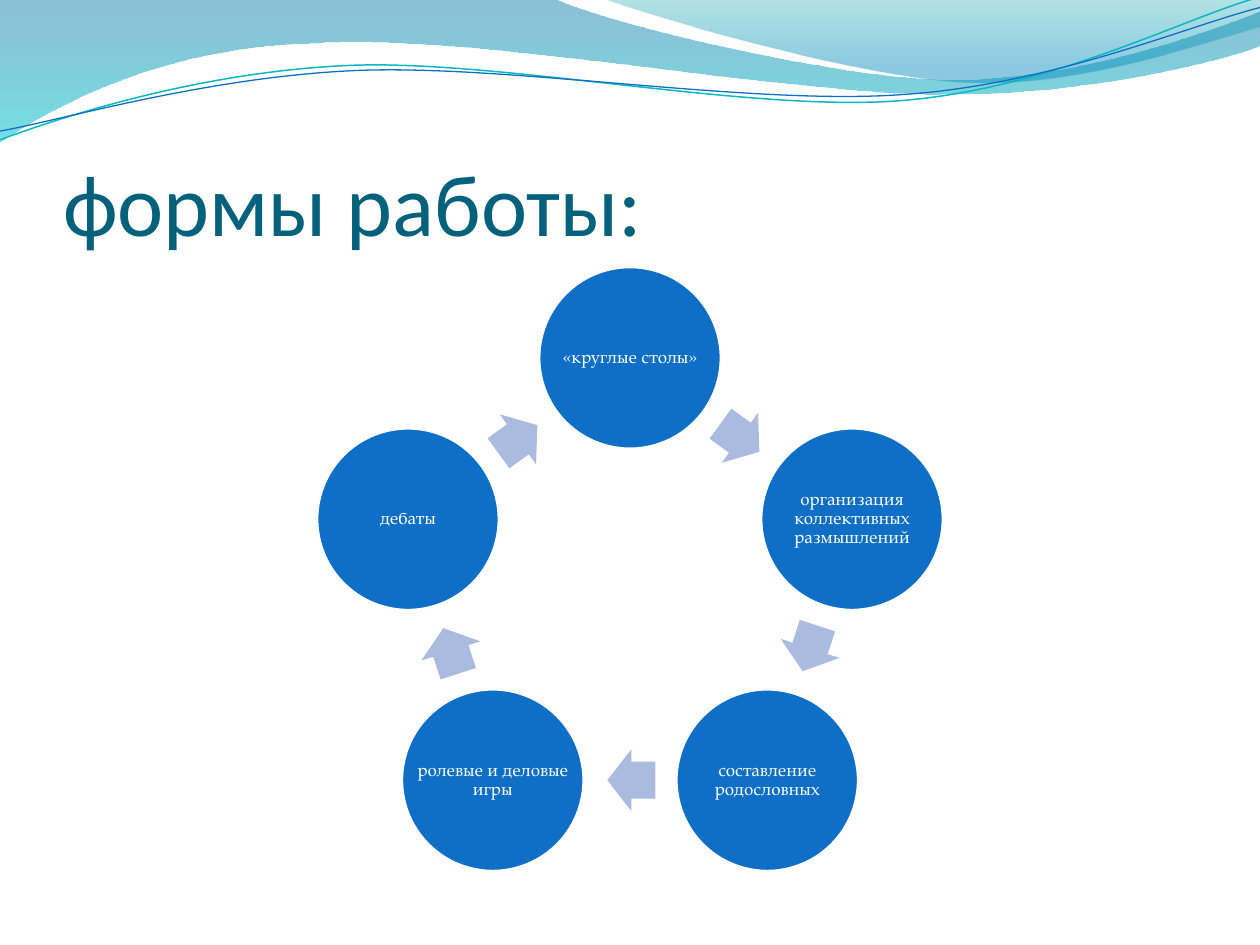
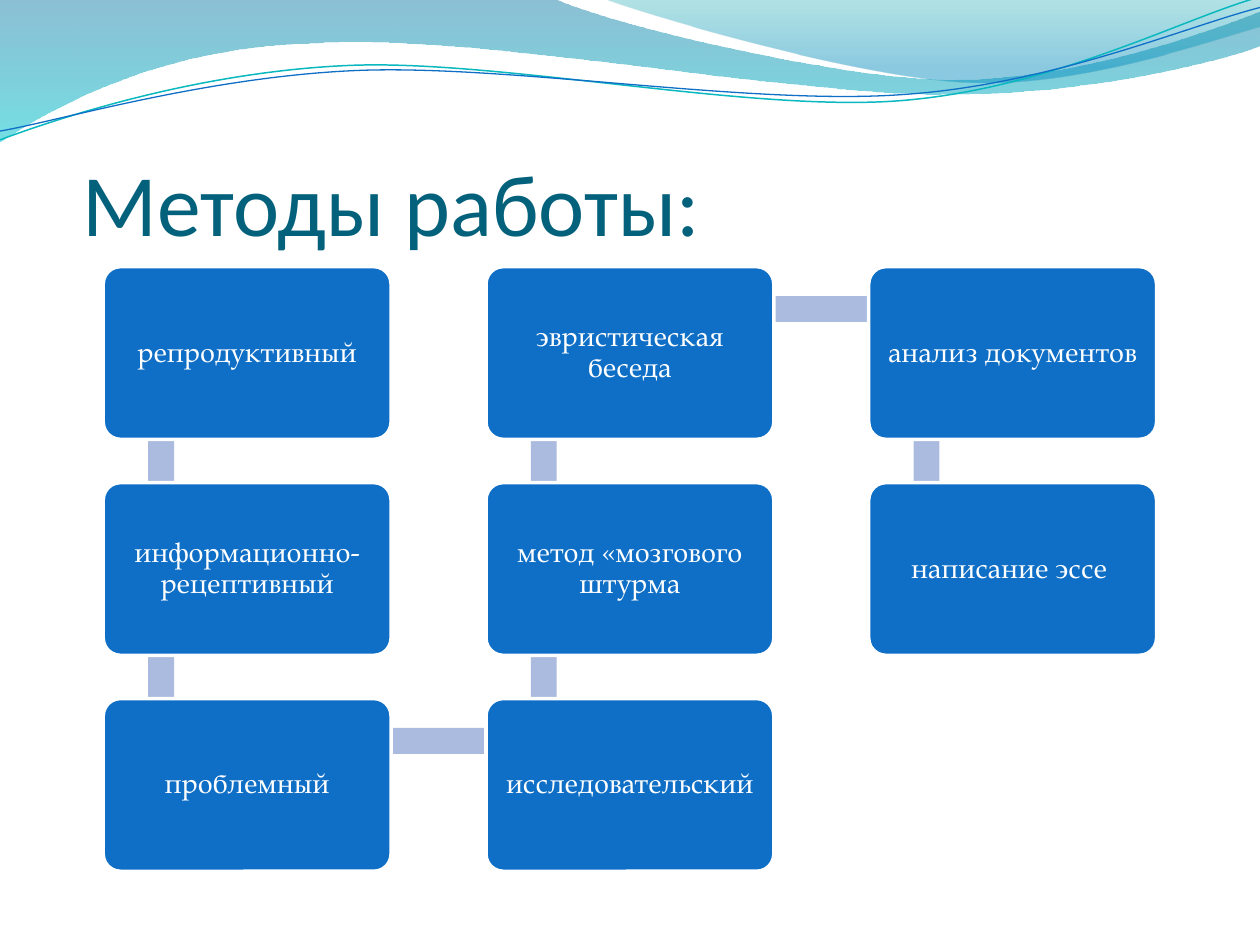
from math import cos, radians, sin

from lxml.etree import SubElement
from pptx import Presentation
from pptx.dml.color import RGBColor
from pptx.enum.shapes import MSO_SHAPE
from pptx.enum.text import MSO_ANCHOR, MSO_AUTO_SIZE, PP_ALIGN
from pptx.oxml.ns import qn
from pptx.util import Pt

# Content
FORMS_TITLE = "формы работы:"
FORMS = [
    "«круглые столы»",
    "организация коллективных размышлений",
    "составление родословных",
    "ролевые и деловые игры",
    "дебаты",
]
METHODS_TITLE = " Методы работы:"
METHODS = [
    "репродуктивный",
    "информационно-рецептивный",
    "проблемный",
    "исследовательский",
    "метод «мозгового штурма",
    "эвристическая беседа",
    "анализ документов",
    "написание эссе ",
]

# Shared style
BLUE, PALE, TITLE_COLOR, WHITE = "0F6FC6", "ABBBDF", "04617B", "FFFFFF"
TITLE_FONT, BODY_FONT = "Calibri", "TeX Gyre Pagella"

# Wave outlines: one point is a straight step, three points are a Bézier curve
BANDS = [
    ([[(0, 0)], [(316.8, -0.7)],
      [(342.7, 12.2), (478.1, 45.4), (545.8, 45.4)],
      [(614.2, 45.4), (689.8, 18.7), (720, 6.5)],
      [(720.7, 25.9)],
      [(707.8, 31.7), (626.4, 54.7), (537.1, 54)],
      [(447.8, 54), (275, 20.2), (185, 24.5)],
      [(92.9, 25.9), (33.1, 59.8), (-0.7, 81.4)]],
     [(0, "0074A1", 45), (1, "00C6CF", 55)]),
    ([[(344.9, -0.7)],
      [(366.5, 7.9), (491, 44.6), (553.7, 46.8)],
      [(616.3, 49.7), (691.9, 23), (720, 15.1)],
      [(720, 0)]],
     [(0, "00A1A9", 30), (0.8, "008BBF", 45)]),
]
STRANDS = [
    ([[(0, 79.9)],
      [(34.6, 67), (113.8, 41), (199.4, 37.4)],
      [(284.4, 33.8), (427, 64.1), (513.4, 57.6)],
      [(599.8, 51.1), (675.4, 10.8), (718.6, -1.4)]], "0AB8BF", 0.85),
    ([[(0, 74.9)],
      [(33.8, 69.1), (118.1, 43.9), (203.8, 40.3)],
      [(290.2, 36.7), (429.8, 60.5), (516.2, 54)],
      [(601.9, 48.2), (677.5, 15.1), (720, 4.3)]], BLUE, 0.75),
]
STRAND_TILT = 2.7


def color(value):
    return RGBColor.from_string(value)


def level(outline, center_x=359.5, center_y=42):
    """Undo the tilt of a strand, which its rotation then restores."""
    across, down = cos(radians(STRAND_TILT)), sin(radians(STRAND_TILT))
    return [[(center_x + (x - center_x) * across - (y - center_y) * down,
              center_y + (x - center_x) * down + (y - center_y) * across)
             for x, y in part] for part in outline]


def add_wave(page, outline, close):
    """Build the outline from its end points, then bend the curved steps."""
    ends = [(Pt(part[-1][0]), Pt(part[-1][1])) for part in outline]
    builder = page.shapes.build_freeform(*ends[0])
    builder.add_line_segments(ends[1:], close=close)
    wave = builder.convert_to_shape()
    wave.shadow.inherit = False

    left, top = min(x for x, _ in ends), min(y for _, y in ends)
    steps = list(wave._element.spPr.iter(qn("a:lnTo")))
    for step, part in zip(steps, outline[1:]):
        if len(part) == 3:
            curve = step.makeelement(qn("a:cubicBezTo"))
            for x, y in part:
                SubElement(curve, qn("a:pt"), x=str(Pt(x) - left), y=str(Pt(y) - top))
            step.getparent().replace(step, curve)
    return wave


def add_waves(page, layout):
    """Draw the waves once and move them to the layout."""
    waves = []
    for outline, stops in BANDS:
        band = add_wave(page, outline, True)
        band.line.fill.background()
        band.fill.gradient()
        band.fill.gradient_angle = 270
        for stop, (position, tint, _) in zip(band.fill.gradient_stops, stops):
            stop.position = position
            stop.color.rgb = color(tint)
        tints = list(band._element.spPr.iter(qn("a:srgbClr")))
        for tint, (_, _, opacity) in zip(tints, stops):
            SubElement(tint, qn("a:alpha"), val=str(opacity * 1000))
        waves.append(band)
    for outline, tint, width in STRANDS:
        strand = add_wave(page, level(outline), False)
        strand.rotation = 360 - STRAND_TILT
        strand.fill.background()
        strand.line.color.rgb = color(tint)
        strand.line.width = Pt(width)
        waves.append(strand)
    for index, wave in enumerate(waves):
        layout.shapes._spTree.insert(2 + index, wave._element)


def place_title(layout):
    title = layout.placeholders[0]
    title.left, title.top, title.width, title.height = Pt(36), Pt(55.4), Pt(648), Pt(90)


def style_runs(paragraph, font, size, tint):
    for span in paragraph.runs:
        span.font.name = font
        span.font.size = Pt(size)
        span.font.color.rgb = color(tint)


def set_margins(frame, left, top, right, bottom):
    frame.margin_left, frame.margin_top = Pt(left), Pt(top)
    frame.margin_right, frame.margin_bottom = Pt(right), Pt(bottom)


def set_title(page, text):
    frame = page.shapes.title.text_frame
    frame.text = text
    frame.auto_size = MSO_AUTO_SIZE.NONE
    frame.vertical_anchor = MSO_ANCHOR.BOTTOM
    set_margins(frame, 0, 3.6, 0, 0)
    paragraph = frame.paragraphs[0]
    paragraph.alignment = PP_ALIGN.LEFT
    style_runs(paragraph, TITLE_FONT, 50, TITLE_COLOR)


def add_block(page, kind, left, top, width, height, fill, outlined=False):
    block = page.shapes.add_shape(kind, Pt(left), Pt(top), Pt(width), Pt(height))
    block.shadow.inherit = False
    block.fill.solid()
    block.fill.fore_color.rgb = color(fill)
    if outlined:
        block.line.color.rgb = color(WHITE)
        block.line.width = Pt(2)
    else:
        block.line.fill.background()
    return block


def set_label(box, text, size, margin):
    frame = box.text_frame
    frame.text = text
    frame.word_wrap = True
    frame.vertical_anchor = MSO_ANCHOR.MIDDLE
    set_margins(frame, margin, margin, margin, margin)
    paragraph = frame.paragraphs[0]
    paragraph.alignment = PP_ALIGN.CENTER
    paragraph.line_spacing = 0.9
    style_runs(paragraph, BODY_FONT, size, WHITE)


def add_cycle(page, labels):
    """Circles on a ring, with an arrow halfway to each next one."""
    center_x, center_y, radius = 360, 337.9, 133.4
    diameter, arrow_width, arrow_height = 104.4, 27.4, 35.3
    turn = 360 / len(labels)

    def corner(angle, distance, width, height):
        x = center_x + distance * sin(radians(angle))
        y = center_y - distance * cos(radians(angle))
        return x - width / 2, y - height / 2

    for index, label in enumerate(labels):
        left, top = corner(index * turn, radius, diameter, diameter)
        add_block(page, MSO_SHAPE.OVAL, left, top, diameter, diameter, BLUE, True)
        # The label spans the whole circle, wider than the oval's own text area
        box = page.shapes.add_textbox(Pt(left), Pt(top), Pt(diameter), Pt(diameter))
        set_label(box, label, 10, 0.9)

        angle = (index + 0.5) * turn
        left, top = corner(angle - 0.4, radius * cos(radians(turn / 2)),
                           arrow_width, arrow_height)
        arrow = add_block(page, MSO_SHAPE.RIGHT_ARROW, left, top,
                          arrow_width, arrow_height, PALE)
        arrow.adjustments[0], arrow.adjustments[1] = 0.6, 0.5
        arrow.rotation = angle


def add_snake(page, labels, rows=3):
    """Cards running down and up the columns, joined by bars behind them."""
    left, top, step_x, step_y = 59, 152.4, 218.7, 123.4
    width, height, bar = 164.5, 98.7, 14.8
    joint_x, joint_y = 33.1, 24.2

    cards = []
    for index in range(len(labels)):
        column, row = divmod(index, rows)
        if column % 2:
            row = rows - 1 - row
        cards.append((left + column * step_x, top + row * step_y))

    for (x1, y1), (x2, y2) in zip(cards, cards[1:]):
        bar_left, bar_top = min(x1, x2) + joint_x, min(y1, y2) + joint_y
        if x1 == x2:
            add_block(page, MSO_SHAPE.RECTANGLE, bar_left - bar / 2, bar_top, bar, step_y, PALE)
        else:
            add_block(page, MSO_SHAPE.RECTANGLE, bar_left, bar_top - bar / 2, step_x, bar, PALE)

    for (x, y), label in zip(cards, labels):
        card = add_block(page, MSO_SHAPE.ROUNDED_RECTANGLE, x, y, width, height, BLUE, True)
        card.adjustments[0] = 0.1
        set_label(card, label, 16, 3)


def main():
    deck = Presentation()
    deck.slide_width, deck.slide_height = Pt(720), Pt(540)
    layout = deck.slide_layouts[5]
    place_title(layout)

    # Forms of work
    page = deck.slides.add_slide(layout)
    add_waves(page, layout)
    set_title(page, FORMS_TITLE)
    add_cycle(page, FORMS)

    # Methods of work
    page = deck.slides.add_slide(layout)
    set_title(page, METHODS_TITLE)
    add_snake(page, METHODS)

    deck.save("out.pptx")


if __name__ == "__main__":
    main()
